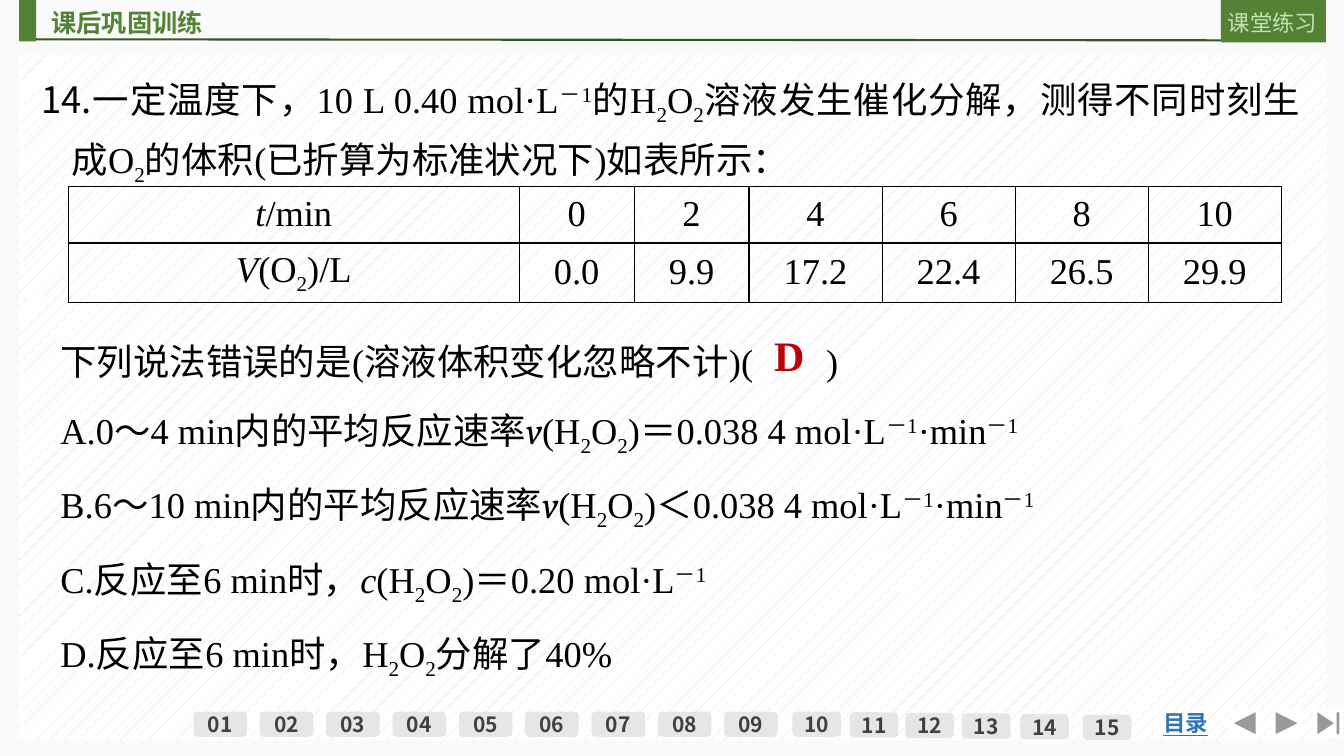
from dataclasses import dataclass

from lxml.etree import SubElement
from pptx import Presentation
from pptx.dml.color import RGBColor
from pptx.enum.dml import MSO_PATTERN as Pattern
from pptx.enum.shapes import MSO_CONNECTOR as Connector, MSO_SHAPE as Preset
from pptx.enum.text import MSO_ANCHOR as Anchor, MSO_AUTO_SIZE as AutoSize, PP_ALIGN as Align
from pptx.oxml.ns import qn
from pptx.util import Inches, Pt


@dataclass(frozen=True)
class Theme:
    background: str = "FAFAFA"
    panel: str = "FFFFFF"
    panel_dots: str = "D9D9D9"
    green: str = "548235"
    dark_green: str = "385723"
    pale_green: str = "C5E0B4"
    pill: str = "E7E6E6"
    pill_text: str = "404040"
    link: str = "2E75B6"
    ink: str = "000000"
    answer: str = "C00000"
    sans: str = "Noto Sans CJK SC"
    serif: str = "Times New Roman"
    symbol: str = "Cambria"
    title_size: int = 18
    label_size: int = 16
    pill_size: int = 15
    body_size: int = 26
    answer_size: int = 30


THEME = Theme()
COLUMNS, ROWS = 133.3, 75
UNIT = Inches(0.1)
BODY_INSET = (1.3, 0.7)
LABEL_INSET = (1, 0.5)


@dataclass(frozen=True)
class Box:
    left: float
    top: float
    width: float
    height: float

    def inner(self, left, top, width, height):
        return Box(self.left + left, self.top + top, width, height)

    def lengths(self):
        return [int(n * UNIT) for n in (self.left, self.top, self.width, self.height)]


MARKS = {
    "_": dict(baseline=-25),
    "^": dict(baseline=30),
    "/": dict(italic=True),
    "~": dict(italic=True, font=THEME.symbol),
    "#": dict(font=THEME.sans),
}


def add_run(paragraph, text, size, color, font=THEME.sans, bold=False,
            italic=False, underline=False, baseline=0):
    run = paragraph.add_run()
    run.text = text
    run.font.size = Pt(size)
    run.font.name = font
    run.font.bold = bold
    run.font.italic = italic
    run.font.underline = underline
    run.font.color.rgb = RGBColor.from_string(color)
    properties = run._r.get_or_add_rPr()
    SubElement(properties, qn("a:ea")).set("typeface", THEME.sans)
    if baseline:
        properties.set("baseline", str(baseline * 1000))


def add_formula(paragraph, markup):
    for index, piece in enumerate(markup.replace("}", "{").split("{")):
        style = dict(font=THEME.serif)
        if index % 2:
            style.update(MARKS[piece[0]])
            piece = piece[1:]
        if piece:
            add_run(paragraph, piece, THEME.body_size, THEME.ink, **style)


def set_frame(frame, inset=LABEL_INSET, wrap=True, anchor=Anchor.TOP, grow=True):
    frame.margin_left = frame.margin_right = int(inset[0] * UNIT)
    frame.margin_top = frame.margin_bottom = int(inset[1] * UNIT)
    frame.word_wrap = wrap
    frame.vertical_anchor = anchor
    frame.auto_size = AutoSize.SHAPE_TO_FIT_TEXT if grow else AutoSize.NONE


def add_text(slide, box, **frame_options):
    frame = slide.shapes.add_textbox(*box.lengths()).text_frame
    set_frame(frame, **frame_options)
    return frame


def add_block(slide, box, preset, color):
    shape = slide.shapes.add_shape(preset, *box.lengths())
    shape.shadow.inherit = False
    shape.fill.solid()
    shape.fill.fore_color.rgb = RGBColor.from_string(color)
    shape.line.fill.background()
    return shape


def add_panel(slide, box):
    panel = add_block(slide, box, Preset.RECTANGLE, THEME.panel)
    panel.fill.patterned()
    panel.fill.pattern = Pattern.PERCENT_5
    panel.fill.fore_color.rgb = RGBColor.from_string(THEME.panel_dots)
    panel.fill.back_color.rgb = RGBColor.from_string(THEME.panel)


def add_header(slide, box, heading, label):
    title = slide.shapes.title
    title.left, title.top, title.width, title.height = box.inner(4.1, 0.2, 58.3, 4).lengths()
    set_frame(title.text_frame)
    paragraph = title.text_frame.paragraphs[0]
    paragraph.alignment = Align.LEFT
    paragraph.line_spacing = 1.0
    add_run(paragraph, heading, THEME.title_size, THEME.green, bold=True)

    start_x, start_y, run_x, run_y = box.inner(2.1, 3.9, 119.7, 0.1).lengths()
    rule = slide.shapes.add_connector(
        Connector.STRAIGHT, start_x, start_y, start_x + run_x, start_y + run_y)
    rule.line.color.rgb = RGBColor.from_string(THEME.dark_green)
    rule.line.width = Pt(1.5)
    SubElement(rule._element.spPr, qn("a:effectLst"))

    add_block(slide, box.inner(1.9, 0, 1.7, 4.1), Preset.RECTANGLE, THEME.green)
    add_block(slide, box.inner(121.1, 0, 10.4, 4.2), Preset.RECTANGLE, THEME.green)
    frame = add_text(slide, box.inner(120.8, 0.4, 11.8, 3.7))
    add_run(frame.paragraphs[0], label, THEME.label_size, THEME.pale_green)


def add_navigation(slide, box):
    wide = [(6.58 * i, 0.7, 5.3) for i in range(9)]
    narrow = [(left, 0.7 + 0.06 * i, 4.8)
              for i, left in enumerate((59.4, 65.1, 70.6, 76.2, 82, 88.2))]
    for number, (left, top, width) in enumerate(wide + narrow, 1):
        pill = add_block(slide, box.inner(left, top, width, 2.5),
                         Preset.ROUNDED_RECTANGLE, THEME.pill)
        set_frame(pill.text_frame, anchor=Anchor.MIDDLE, grow=False)
        paragraph = pill.text_frame.paragraphs[0]
        paragraph.alignment = Align.CENTER
        add_run(paragraph, f"{number:02}", THEME.pill_size, THEME.pill_text, bold=True)

    frame = add_text(slide, box.inner(95.2, 0, 6.5, 3.7), wrap=False)
    add_run(frame.paragraphs[0], "目录", THEME.label_size, THEME.link,
            bold=True, underline=True)
    buttons = (Preset.ACTION_BUTTON_BACK_OR_PREVIOUS,
               Preset.ACTION_BUTTON_FORWARD_OR_NEXT, Preset.ACTION_BUTTON_END)
    for index, preset in enumerate(buttons):
        add_block(slide, box.inner(102.8 + 4.15 * index, 0.4, 2.9, 2.9), preset, THEME.panel)


def add_question(slide, box, markup):
    paragraph = add_text(slide, box, inset=BODY_INSET).paragraphs[0]
    paragraph.alignment = Align.JUSTIFY
    paragraph.line_spacing = 1.2
    properties = paragraph._p.get_or_add_pPr()
    properties.set("marL", str(3 * UNIT))
    properties.set("indent", str(-5 * UNIT))
    add_formula(paragraph, markup)


def add_borders(cell):
    properties = cell._tc.get_or_add_tcPr()
    for index, side in enumerate(("lnL", "lnR", "lnT", "lnB")):
        line = properties.makeelement(qn(f"a:{side}"), {"w": str(Pt(1))})
        fill = SubElement(line, qn("a:solidFill"))
        SubElement(fill, qn("a:srgbClr")).set("val", THEME.ink)
        properties.insert(index, line)


def add_data_table(slide, box, rows):
    table = slide.shapes.add_table(len(rows), len(rows[0]), *box.lengths()).table
    table.first_row = table.horz_banding = False
    for column, width in zip(table.columns, [44.7] + [11.4] * 2 + [13.2] * 4):
        column.width = int(width * UNIT)
    for row, height in zip(table.rows, (5.6, 5.9)):
        row.height = int(height * UNIT)
    for row, values in zip(table.rows, rows):
        for cell, value in zip(row.cells, values):
            cell.fill.background()
            cell.margin_left = cell.margin_right = int(0.7 * UNIT)
            cell.margin_top = cell.margin_bottom = 0
            cell.vertical_anchor = Anchor.MIDDLE
            add_borders(cell)
            paragraph = cell.text_frame.paragraphs[0]
            paragraph.alignment = Align.CENTER
            add_formula(paragraph, value)


def add_options(slide, box, lines, answer):
    frame = add_text(slide, box, inset=BODY_INSET)
    for index, markup in enumerate(lines):
        paragraph = frame.add_paragraph() if index else frame.paragraphs[0]
        paragraph.alignment = Align.JUSTIFY
        paragraph.line_spacing = 1.5
        add_formula(paragraph, markup)
    mark = add_text(slide, box.inner(71.1, 1.4, 9.8, 6.1))
    add_run(mark.paragraphs[0], answer, THEME.answer_size, THEME.answer,
            font=THEME.serif, bold=True)


def main():
    presentation = Presentation()
    presentation.slide_width = int(COLUMNS * UNIT)
    presentation.slide_height = ROWS * UNIT
    slide = presentation.slides.add_slide(presentation.slide_layouts[5])
    slide.background.fill.solid()
    slide.background.fill.fore_color.rgb = RGBColor.from_string(THEME.background)

    add_panel(slide, Box(1.9, 5.4, 129.7, 68))
    add_navigation(slide, Box(19.2, 69.9, 114.1, 3.7))
    add_header(slide, Box(0, 0, COLUMNS, 4.2), "课后巩固训练", "课堂练习")
    add_question(slide, Box(2.8, 6, 127.5, 11.4),
                 "{#14.}一定温度下，10 L 0.40 mol·L{^－1}的H{_2}O{_2}溶液发生催化分解，"
                 "测得不同时刻生成O{_2}的体积(已折算为标准状况下)如表所示：")
    add_data_table(slide, Box(6.8, 18.5, 120, 11.5), [
        ["{/t}/min", "0", "2", "4", "6", "8", "10"],
        ["{/V}(O{_2})/L", "0.0", "9.9", "17.2", "22.4", "26.5", "29.9"],
    ])
    add_options(slide, Box(4.7, 30.8, 123, 34.2), [
        "下列说法错误的是(溶液体积变化忽略不计)(　　)",
        "A.0～4 min内的平均反应速率{~v}(H{_2}O{_2})＝0.038 4 mol·L{^－1}·min{^－1}",
        "B.6～10 min内的平均反应速率{~v}(H{_2}O{_2})＜0.038 4 mol·L{^－1}·min{^－1}",
        "C.反应至6 min时，{/c}(H{_2}O{_2})＝0.20 mol·L{^－1}",
        "D.反应至6 min时，H{_2}O{_2}分解了40%",
    ], "D")
    presentation.save("out.pptx")


if __name__ == "__main__":
    main()
